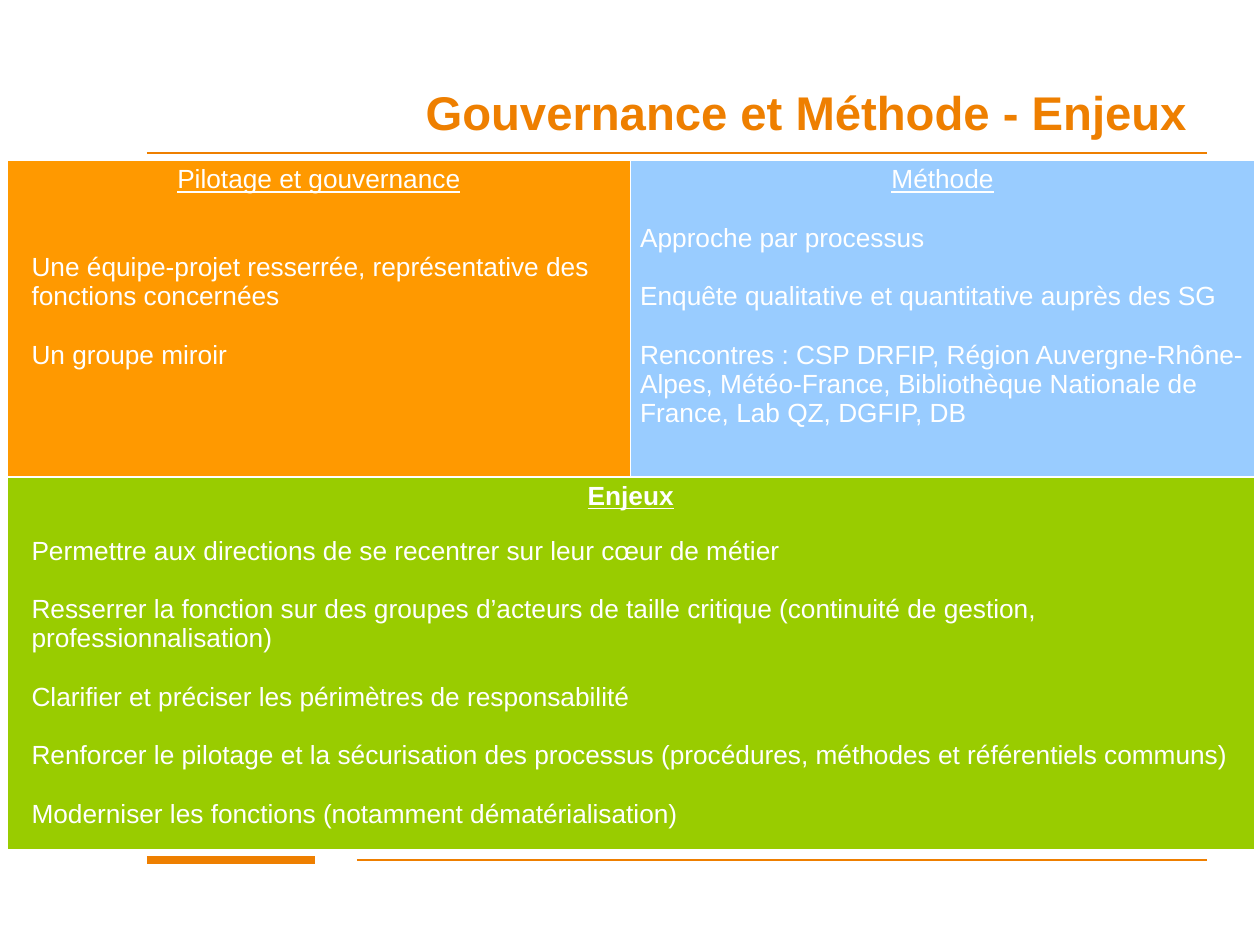
import pptx
import pptx.util
import pptx.dml.color
import pptx.enum.shapes
import pptx.enum.text
import pptx.oxml
import pptx.oxml.ns

Pt = pptx.util.Pt
ALIGN = pptx.enum.text.PP_ALIGN
ANCHOR = pptx.enum.text.MSO_ANCHOR
HUES = {
    "accent": "EE7F00",
    "white": "FFFFFF",
    "orange": "FF9900",
    "blue": "99CCFF",
    "green": "99CC00",
}
LINE = 16.75


def shade(key):
    return pptx.dml.color.RGBColor.from_string(HUES[key])


class Deck:
    def __init__(self, wide, high):
        self.face = "Arial"
        self.size = 15
        self.file = pptx.Presentation()
        self.file.slide_width = Pt(wide)
        self.file.slide_height = Pt(high)
        self.slide = self.file.slides.add_slide(self.file.slide_layouts[6])

    def rule(self, left, right, y, width):
        kind = pptx.enum.shapes.MSO_CONNECTOR.STRAIGHT
        line = self.slide.shapes.add_connector(kind, Pt(left), Pt(y), Pt(right), Pt(y))
        line.line.color.rgb = shade("accent")
        line.line.width = Pt(width)
        line._element.spPr.append(pptx.oxml.ns.qn("a:effectLst") and
                                  pptx.oxml.parse_xml(f"<a:effectLst {pptx.oxml.ns.nsdecls('a')}/>"))

    def run(self, para, text, key="white", size=None, bold=False, under=False):
        run = para.add_run()
        run.text = text
        font = run.font
        font.name = self.face
        font.size = Pt(size or self.size)
        font.bold = bold
        font.underline = under
        font.color.rgb = shade(key)

    def title(self, text, left, top, wide, high):
        frame = self.slide.shapes.add_textbox(Pt(left), Pt(top), Pt(wide), Pt(high)).text_frame
        frame.word_wrap = True
        frame.vertical_anchor = ANCHOR.BOTTOM
        frame.margin_bottom = Pt(8)
        frame.margin_left = frame.margin_right = Pt(5.76)
        para = frame.paragraphs[0]
        para.alignment = ALIGN.RIGHT
        self.run(para, text, "accent", 27, True)

    def table(self, left, top, cols, rows):
        grid = self.slide.shapes.add_table(
            len(rows), len(cols), Pt(left), Pt(top), Pt(sum(cols)), Pt(sum(rows))).table
        grid.first_row = grid.horz_banding = False
        for col, wide in zip(grid.columns, cols):
            col.width = Pt(wide)
        for row, high in zip(grid.rows, rows):
            row.height = Pt(high)
        return grid

    def edge(self, cell):
        props = cell._tc.get_or_add_tcPr()
        for side in "LRTB":
            props.append(pptx.oxml.parse_xml(
                f'<a:ln{side} {pptx.oxml.ns.nsdecls("a")} w="{Pt(1)}"><a:solidFill>'
                f'<a:srgbClr val="{HUES["white"]}"/></a:solidFill></a:ln{side}>'))

    def panel(self, cell, key, head, items, gap, inset=0, bold=False):
        self.edge(cell)
        cell.fill.solid()
        cell.fill.fore_color.rgb = shade(key)
        cell.vertical_anchor = ANCHOR.TOP
        cell.margin_left = cell.margin_right = Pt(5.4)
        cell.margin_top = cell.margin_bottom = Pt(2.7)
        frame = cell.text_frame
        para = frame.paragraphs[0]
        para.alignment = ALIGN.CENTER
        self.run(para, head, bold=bold, under=True)
        for spot, text in enumerate(items):
            para = frame.add_paragraph()
            para.alignment = ALIGN.LEFT
            para.space_before = Pt(LINE if spot else gap)
            props = para._p.get_or_add_pPr()
            props.set("marL", str(Pt(inset)))
            props.set("indent", "0")
            self.run(para, text)


def main():
    deck = Deck(720, 540)
    deck.rule(84, 180, 491.5, 4.5)
    deck.rule(204, 690, 491.5, 1.5)
    deck.rule(84, 690, 87.4, 1.5)
    deck.title("Gouvernance et Méthode - Enjeux", 84, 11.5, 600, 76.3)
    grid = deck.table(4, 91.7, [356.4] * 2, [181, 203.5])
    deck.panel(grid.cell(0, 0), "orange", "Pilotage et gouvernance", [
        "Une équipe-projet resserrée, représentative des fonctions concernées",
        "Un groupe miroir",
    ], 2 * LINE, 8.64)
    deck.panel(grid.cell(0, 1), "blue", "Méthode", [
        "Approche par processus",
        "Enquête qualitative et quantitative auprès des SG",
        "Rencontres : CSP DRFIP, Région Auvergne-Rhône-Alpes, Météo-France, "
        "Bibliothèque Nationale de France, Lab QZ, DGFIP, DB",
    ], LINE)
    grid.cell(1, 0).merge(grid.cell(1, 1))
    deck.panel(grid.cell(1, 0), "green", "Enjeux", [
        "Permettre aux directions de se recentrer sur leur cœur de métier",
        "Resserrer la fonction sur des groupes d’acteurs de taille critique "
        "(continuité de gestion, professionnalisation)",
        "Clarifier et préciser les périmètres de responsabilité",
        "Renforcer le pilotage et la sécurisation des processus "
        "(procédures, méthodes et référentiels communs)",
        "Moderniser les fonctions (notamment dématérialisation)",
    ], 14.5, 8.64, True)
    deck.file.save("out.pptx")


if __name__ == "__main__":
    main()
